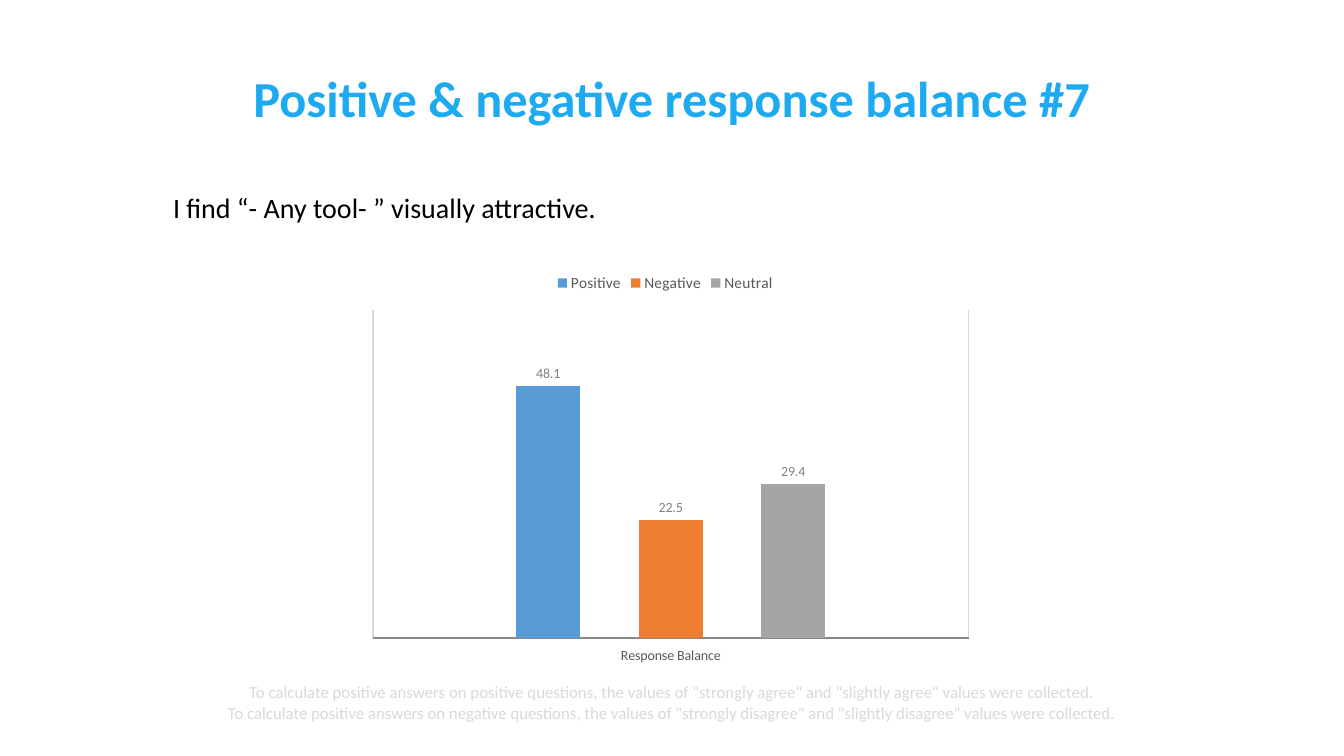
from dataclasses import dataclass

from lxml import etree
from pptx import Presentation
from pptx.chart.data import CategoryChartData
from pptx.dml.color import RGBColor as RGB
from pptx.enum.chart import XL_CHART_TYPE as ChartType
from pptx.enum.chart import XL_LABEL_POSITION as LabelPos
from pptx.enum.chart import XL_LEGEND_POSITION as LegendPos
from pptx.enum.chart import XL_TICK_LABEL_POSITION as TickLabels
from pptx.enum.chart import XL_TICK_MARK as Tick
from pptx.enum.text import MSO_ANCHOR as Anchor
from pptx.enum.text import PP_ALIGN as Align
from pptx.oxml.ns import qn
from pptx.util import Inches, Pt

WIDTH, HEIGHT = Inches(13.333), Inches(7.5)


@dataclass(frozen=True)
class Theme:
    font: str = "Calibri"
    title: str = "1EAAF0"
    text: str = "000000"
    note: str = "D9D9D9"
    grid: str = "D9D9D9"
    axis: str = "888888"
    axis_text: str = "595959"
    value_text: str = "808080"
    title_size: int = 36
    text_size: int = 20
    note_size: int = 12
    legend_size: int = 11
    label_size: int = 10


@dataclass(frozen=True)
class Box:
    """A frame in shares of the slide's width and height."""
    x: float
    y: float
    w: float
    h: float

    def emu(self) -> tuple[int, ...]:
        return tuple(round(share * side) for share, side in
                     zip((self.x, self.y, self.w, self.h), (WIDTH, HEIGHT) * 2))


@dataclass(frozen=True)
class Response:
    name: str
    value: float
    color: str


THEME = Theme()
TITLE_BOX = Box(0.125, 0.089, 0.75, 0.087)
STATEMENT_BOX = Box(0.125, 0.223, 0.75, 0.2)
CHART_BOX = Box(0.267, 0.347, 0.456, 0.531)
NOTE_BOX = Box(0.004, 0.897, 0.992, 0.064)
PLOT_AREA = Box(0.023, 0.119, 0.972, 0.819)  # shares of the chart

RESPONSES = (
    Response("Positive", 48.1, "5B9BD5"),
    Response("Negative", 22.5, "ED7D31"),
    Response("Neutral", 29.4, "A5A5A5"),
)
NOTES = (
    'To calculate positive answers on positive questions, the values of '
    '"strongly agree" and "slightly agree" values were collected.',
    'To calculate positive answers on negative questions, the values of '
    '"strongly disagree" and "slightly disagree" values were collected.',
)


def apply(target, formats: dict) -> None:
    for name, value in formats.items():
        setattr(target, name, value)


def style_font(font, size: int, color: str, bold: bool = False) -> None:
    apply(font, {"name": THEME.font, "size": Pt(size), "bold": bold})
    font.color.rgb = RGB.from_string(color)


def style_line(line, color: str) -> None:
    line.width = Pt(1)
    line.color.rgb = RGB.from_string(color)


def write(sp, box: Box, lines: tuple[str, ...], size: int, color: str,
          anchor: Anchor, bold: bool = False, **paragraph) -> None:
    apply(sp, dict(zip(("left", "top", "width", "height"), box.emu())))
    tf = sp.text_frame
    margins = ("margin_left", "margin_top", "margin_right", "margin_bottom")
    apply(tf, {"word_wrap": True, "vertical_anchor": anchor,
               **dict.fromkeys(margins, Inches(0.05))})
    for i, line in enumerate(lines):
        p = tf.add_paragraph() if i else tf.paragraphs[0]
        apply(p, paragraph)
        r = p.add_run()
        r.text = line
        style_font(r.font, size, color, bold)


def place_plot(chart, box: Box) -> None:
    """Fix the inner plot area inside the chart."""
    area = chart._chartSpace.chart.plotArea
    for old in area.findall(qn("c:layout")):
        area.remove(old)
    layout = etree.Element(qn("c:layout"))
    manual = etree.SubElement(layout, qn("c:manualLayout"))
    settings = {"layoutTarget": "inner", "xMode": "edge", "yMode": "edge",
                "x": box.x, "y": box.y, "w": box.w, "h": box.h}
    for tag, value in settings.items():
        etree.SubElement(manual, qn(f"c:{tag}")).set("val", str(value))
    area.insert(0, layout)


def add_response_chart(s, box: Box, responses: tuple[Response, ...]) -> None:
    data = CategoryChartData()
    data.categories = ["Response Balance"]
    for response in responses:
        data.add_series(response.name, [response.value])
    chart = s.shapes.add_chart(ChartType.COLUMN_CLUSTERED, *box.emu(), data).chart
    chart.has_title = False
    style_font(chart.font, THEME.label_size, THEME.text)
    place_plot(chart, PLOT_AREA)

    # Legend
    chart.has_legend = True
    apply(chart.legend, {"position": LegendPos.TOP, "include_in_layout": True})
    style_font(chart.legend.font, THEME.legend_size, THEME.axis_text)

    # Axes
    no_ticks = {"major_tick_mark": Tick.NONE, "minor_tick_mark": Tick.NONE}
    cat, val = chart.category_axis, chart.value_axis
    apply(cat, {**no_ticks, "has_major_gridlines": True,
                "tick_label_position": TickLabels.LOW})
    style_font(cat.tick_labels.font, THEME.label_size, THEME.axis_text)
    style_line(cat.format.line, THEME.axis)
    style_line(cat.major_gridlines.format.line, THEME.grid)
    apply(val, {**no_ticks, "has_major_gridlines": False,
                "tick_label_position": TickLabels.NONE,
                "minimum_scale": 0, "maximum_scale": 62.5, "major_unit": 12.5})
    val.format.line.fill.background()

    # Columns and their values
    plot = chart.plots[0]
    apply(plot, {"gap_width": 444, "overlap": -90, "vary_by_categories": False})
    for series, response in zip(plot.series, responses):
        series.format.fill.solid()
        series.format.fill.fore_color.rgb = RGB.from_string(response.color)
        labels = series.data_labels
        apply(labels, {"show_value": True, "position": LabelPos.OUTSIDE_END,
                       "number_format": "0.#", "number_format_is_linked": False})
        style_font(labels.font, THEME.label_size, THEME.value_text)


def main() -> None:
    prs = Presentation()
    apply(prs, {"slide_width": WIDTH, "slide_height": HEIGHT})
    s = prs.slides.add_slide(prs.slide_layouts.get_by_name("Title Only"))

    # Notes on the calculation
    write(s.shapes.add_textbox(0, 0, 0, 0), NOTE_BOX, NOTES, THEME.note_size,
          THEME.note, Anchor.MIDDLE, alignment=Align.CENTER)

    # Title and survey statement
    write(s.shapes.title, TITLE_BOX, ("Positive & negative response balance #7",),
          THEME.title_size, THEME.title, Anchor.BOTTOM, bold=True,
          alignment=Align.CENTER, line_spacing=0.9)
    write(s.shapes.add_textbox(0, 0, 0, 0), STATEMENT_BOX,
          ("I find “- Any tool- ” visually attractive.",),
          THEME.text_size, THEME.text, Anchor.TOP,
          alignment=Align.LEFT, line_spacing=1.5, space_before=Pt(10))

    # Response balance
    add_response_chart(s, CHART_BOX, RESPONSES)
    prs.save("out.pptx")


if __name__ == "__main__":
    main()
